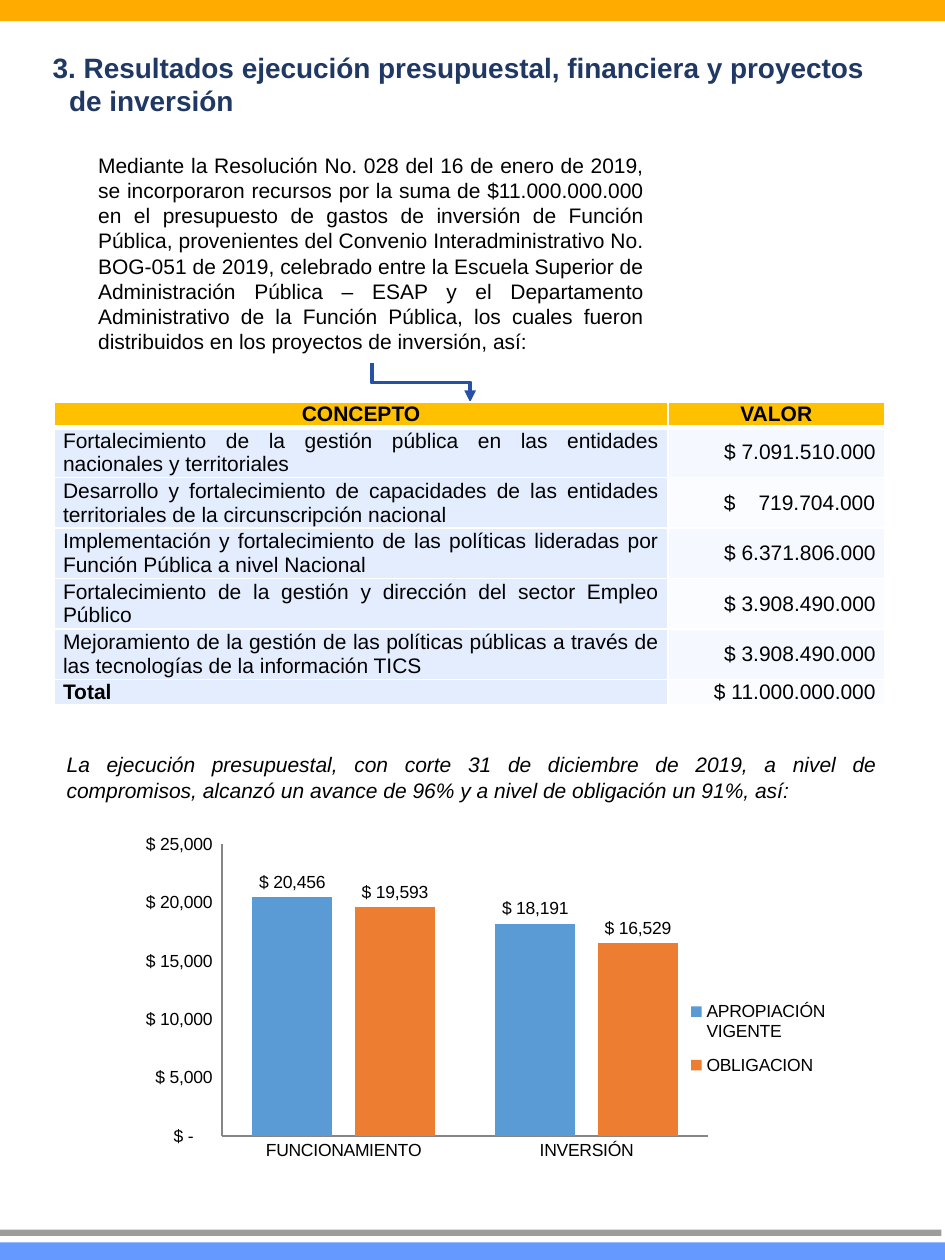
import pptx
import pptx.chart.data
import pptx.dml.color
import pptx.enum.chart
import pptx.enum.shapes
import pptx.enum.text
import pptx.oxml
import pptx.oxml.ns
import pptx.util
from lxml import etree

Pt = pptx.util.Pt
ALIGN = pptx.enum.text.PP_ALIGN
NS = pptx.oxml.ns.nsdecls("a")
MONEY = r'_("$"\ * #,##0_);_("$"\ * \(#,##0\);_("$"\ * "-"??_);_(@_)'

CONCEPTS = [
    ("Fortalecimiento de la gestión pública en las entidades nacionales y territoriales",
     "$ 7.091.510.000"),
    ("Desarrollo y fortalecimiento de capacidades de las entidades territoriales "
     "de la circunscripción nacional", "$\t719.704.000"),
    ("Implementación y fortalecimiento de las políticas lideradas por Función Pública "
     "a nivel Nacional", "$ 6.371.806.000"),
    ("Fortalecimiento de la gestión y dirección del sector Empleo Público",
     "$ 3.908.490.000"),
    ("Mejoramiento de la gestión de las políticas públicas a través de las tecnologías "
     "de la información TICS", "$ 3.908.490.000"),
    ("Total", "$ 11.000.000.000"),
]
RESOLUTION = (
    "Mediante la Resolución No. 028 del 16 de enero de 2019, se incorporaron recursos por "
    "la suma de $11.000.000.000 en el presupuesto de gastos de inversión de Función Pública, "
    "provenientes del Convenio Interadministrativo No. BOG-051 de 2019, celebrado entre la "
    "Escuela Superior de Administración Pública – ESAP y el Departamento Administrativo de "
    "la Función Pública, los cuales fueron distribuidos en los proyectos de inversión, así:")
EXECUTION = (
    "La ejecución presupuestal, con corte 31 de diciembre de 2019, a nivel de compromisos, "
    "alcanzó un avance de 96% y a nivel de obligación un 91%, así:")


def color(value):
    return pptx.dml.color.RGBColor.from_string(value)


def apply(target, formats):
    for name, value in formats.items():
        setattr(target, name, value)


def paint(fill, value):
    fill.solid()
    fill.fore_color.rgb = color(value)


def write(paragraph, text, align, tint="000000", **font):
    paragraph.alignment = align
    run = paragraph.add_run()
    run.text = text
    apply(run.font, {"name": "Arial", "size": Pt(12), **font})
    run.font.color.rgb = color(tint)


def add_bands(slide, boxes):
    for box, value in boxes:
        band = slide.shapes.add_shape(
            pptx.enum.shapes.MSO_SHAPE.RECTANGLE, *map(Pt, box))
        band.shadow.inherit = False
        paint(band.fill, value)
        band.line.fill.background()


def add_text(slide, box, text, align=ALIGN.JUSTIFY, **font):
    frame = slide.shapes.add_textbox(*map(Pt, box)).text_frame
    frame.word_wrap = True
    write(frame.paragraphs[0], text, align, **font)
    return frame.paragraphs[0]


def add_title(slide, box):
    title = add_text(
        slide, box,
        "3. Resultados ejecución presupuestal, financiera y proyectos de inversión",
        ALIGN.LEFT, tint="203864", size=Pt(16), bold=True)
    title.space_before = Pt(4.2)
    # Hanging indent
    apply_indent = title._p.get_or_add_pPr()
    apply_indent.set("marL", str(Pt(24.5)))
    apply_indent.set("indent", str(Pt(-9.4)))


def add_arrow(slide, box):
    left, top, width, height = box
    # The elbow leaves downwards, so its frame is turned a quarter about its centre
    middle_x, middle_y = left + width / 2, top + height / 2
    arrow = slide.shapes.add_connector(
        pptx.enum.shapes.MSO_CONNECTOR.ELBOW,
        Pt(middle_x + height / 2), Pt(middle_y - width / 2),
        Pt(middle_x - height / 2), Pt(middle_y + width / 2))
    arrow._element.spPr.find(pptx.oxml.ns.qn("a:xfrm")).set("rot", "16200000")
    arrow.line.width = Pt(2.25)
    arrow.line.color.rgb = color("2651A6")
    arrow.line._get_or_add_ln().append(
        pptx.oxml.parse_xml(f'<a:tailEnd {NS} type="triangle"/>'))
    arrow._element.spPr.append(pptx.oxml.parse_xml(f"<a:effectLst {NS}/>"))


def add_borders(cell, widths):
    for side, width in widths.items():
        cell._tc.get_or_add_tcPr().append(pptx.oxml.parse_xml(
            f'<a:ln{side} {NS} w="{Pt(width)}"><a:solidFill><a:srgbClr val="FFFFFF"/>'
            f"</a:solidFill></a:ln{side}>"))


def add_concepts(slide, box):
    rows = [("CONCEPTO", "VALOR"), *CONCEPTS]
    last = len(rows) - 1
    table = slide.shapes.add_table(len(rows), 2, *map(Pt, box)).table
    apply(table, {"first_row": False, "horz_banding": False})
    value_width = 123.8
    table.columns[0].width = Pt(box[2] - value_width)
    table.columns[1].width = Pt(value_width)
    line = box[3] / (2 * last)  # one-line first and last rows, two lines between
    for i, row in enumerate(rows):
        table.rows[i].height = Pt(line if i in (0, last) else 2 * line)
        for j, text in enumerate(row):
            cell = table.cell(i, j)
            apply(cell, {"margin_left": Pt(5), "margin_right": Pt(5),
                         "margin_top": 0, "margin_bottom": 0,
                         "vertical_anchor": pptx.enum.text.MSO_ANCHOR.MIDDLE})
            add_borders(cell, {"L": 1, "R": 1, "T": 3 if i == 1 else 1,
                               "B": 3 if i == 0 else 1})
            if i == 0:
                fill, align = "FFC000", ALIGN.CENTER
            elif j == 0:
                fill, align = "E4EDFE", ALIGN.JUSTIFY
            else:
                fill, align = ("F5F8FF" if i % 2 else "FAFCFF"), ALIGN.RIGHT
            paint(cell.fill, fill)
            paragraph = cell.text_frame.paragraphs[0]
            if "\t" in text:
                # Currency sign on the left, figure on a right tab
                align, cell.margin_left = ALIGN.LEFT, Pt(32)
                paragraph._p.get_or_add_pPr().append(pptx.oxml.parse_xml(
                    f'<a:tabLst {NS}><a:tab pos="{Pt(86.5)}" algn="r"/></a:tabLst>'))
            write(paragraph, text, align, bold=i == 0 or (i == last and j == 0))


def add_layout(element, box, target=""):
    tag = pptx.oxml.ns.qn
    for old in element.findall(tag("c:layout")):
        element.remove(old)
    layout = etree.Element(tag("c:layout"))
    manual = etree.SubElement(layout, tag("c:manualLayout"))
    settings = [("layoutTarget", target)] if target else []
    settings += [("xMode", "edge"), ("yMode", "edge"), *zip("xywh", box)]
    for name, value in settings:
        etree.SubElement(manual, tag(f"c:{name}")).set("val", str(value))
    return layout


def add_execution_chart(slide, box):
    budget = pptx.chart.data.CategoryChartData(number_format=MONEY)
    budget.categories = ["FUNCIONAMIENTO", "INVERSIÓN"]
    budget.add_series("APROPIACIÓN VIGENTE", (20456, 18191))
    budget.add_series("OBLIGACION", (19593, 16529))
    chart = slide.shapes.add_chart(
        pptx.enum.chart.XL_CHART_TYPE.COLUMN_CLUSTERED, *map(Pt, box), budget).chart
    apply(chart, {"has_title": False, "has_legend": True})
    apply(chart.font, {"name": "Arial", "size": Pt(10)})
    chart.font.color.rgb = color("000000")
    apply(chart.legend, {"position": pptx.enum.chart.XL_LEGEND_POSITION.RIGHT,
                         "include_in_layout": False})
    plot = chart.plots[0]
    apply(plot, {"gap_width": 75, "overlap": -28, "vary_by_categories": False})
    for series, value in zip(plot.series, ("5B9BD5", "ED7D31")):
        paint(series.format.fill, value)
        apply(series.data_labels, {
            "show_value": True, "number_format": MONEY, "number_format_is_linked": False,
            "position": pptx.enum.chart.XL_LABEL_POSITION.OUTSIDE_END})
    for axis in (chart.category_axis, chart.value_axis):
        apply(axis, {"has_major_gridlines": False,
                     "major_tick_mark": pptx.enum.chart.XL_TICK_MARK.NONE})
        axis.format.line.color.rgb = color("868686")
    apply(chart.value_axis, {"minimum_scale": 0, "maximum_scale": 25000, "major_unit": 5000})
    apply(chart.value_axis.tick_labels,
          {"number_format": MONEY, "number_format_is_linked": False})
    # Fixed places for the plot and the legend
    area = chart._chartSpace.chart.plotArea
    area.insert(0, add_layout(area, (0.154, 0.051, 0.673, 0.833), "inner"))
    legend = chart.legend._element
    layout = add_layout(legend, (0.8, 0.46, 0.2, 0.29))
    legend.find(pptx.oxml.ns.qn("c:legendPos")).addnext(layout)


def main():
    deck = pptx.Presentation()
    apply(deck, {"slide_width": Pt(540), "slide_height": Pt(720)})
    slide = deck.slides.add_slide(deck.slide_layouts[6])
    # Top and bottom bands
    add_bands(slide, [((0, 0, 541.5, 12.2), "FFAB00"),
                      ((-0.7, 709.9, 544.3, 10.8), "6699FF"),
                      ((-0.7, 702.7, 538.6, 3.6), "9D9D9C")])
    # Heading and resolution
    add_title(slide, (7.9, 25.2, 497.5, 46))
    add_text(slide, (49, 83.5, 326.2, 123.8), RESOLUTION)
    add_arrow(slide, (212.4, 207.4, 56.2, 22.4))
    add_concepts(slide, (31, 229.7, 474.5, 172.8))
    # Budget execution
    add_text(slide, (31, 426.2, 477.4, 36), EXECUTION, italic=True)
    add_execution_chart(slide, (63.4, 472.3, 412.6, 200.2))
    deck.save("out.pptx")


if __name__ == "__main__":
    main()
